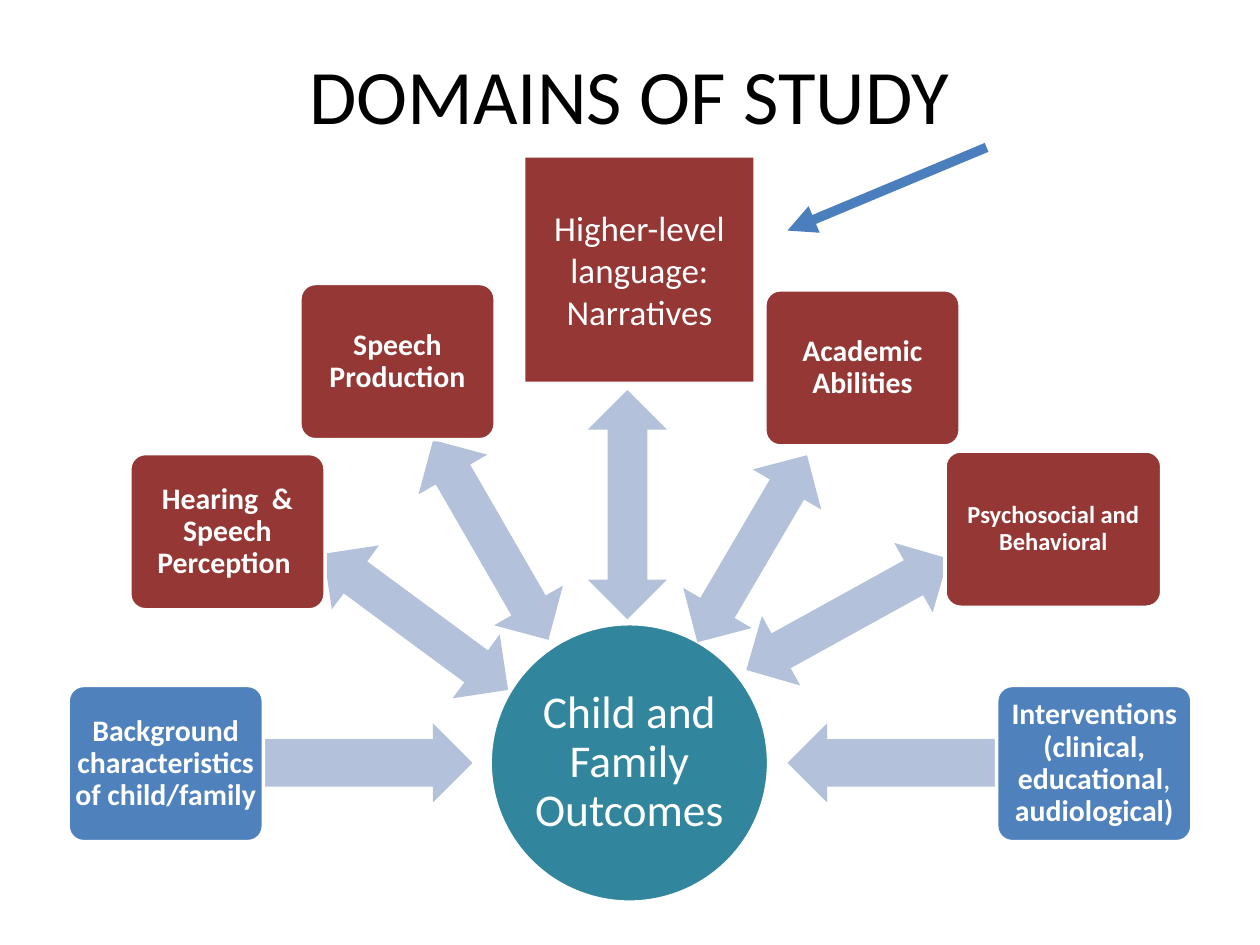
from pptx import Presentation
from pptx import util as u
from pptx.dml import color
from pptx.enum import shapes, text
from pptx.oxml import parse_xml
from pptx.oxml import ns

Inches, Pt = u.Inches, u.Pt
KIND = shapes.MSO_SHAPE
HEX = {"red": "953735", "blue": "4F81BD", "teal": "31859C",
       "arrow": "B3C1DB", "line": "4B7EBC", "white": "FFFFFF", "black": "000000"}

deck = Presentation()
deck.slide_width, deck.slide_height = Inches(10), Inches(7.5)
slide = deck.slides.add_slide(deck.slide_layouts[5])


def rgb(name):
    return color.RGBColor.from_string(HEX[name])


def draw(kind, place, fill, label="", size=17, bold=False, edge=True, pad=0.02, gap=0.9):
    shape = slide.shapes.add_shape(kind, *[Inches(n) for n in place])
    shape.shadow.inherit = False
    shape.fill.solid()
    shape.fill.fore_color.rgb = rgb(fill)
    if edge:
        shape.line.color.rgb = rgb("white")
        shape.line.width = Pt(2)
    else:
        shape.line.fill.background()
    if label:
        frame = shape.text_frame
        frame.text = label
        frame.word_wrap = True
        frame.vertical_anchor = text.MSO_ANCHOR.MIDDLE
        frame.margin_left = frame.margin_right = Inches(pad)
        frame.margin_top = frame.margin_bottom = Inches(pad)
        para = frame.paragraphs[0]
        para.alignment = text.PP_ALIGN.CENTER
        para.line_spacing = gap
        font = para.runs[0].font
        font.name, font.size, font.bold = "Calibri", Pt(size), bold
        font.color.rgb = rgb("white")
    return shape


title = slide.shapes.title
title.left, title.top = Inches(0.33), Inches(0.33)
title.width, title.height = Inches(9.33), Inches(0.83)
title.text_frame.text = "DOMAINS OF STUDY"
title.text_frame.vertical_anchor = text.MSO_ANCHOR.MIDDLE
head = title.text_frame.paragraphs[0]
head.alignment = text.PP_ALIGN.CENTER
font = head.runs[0].font
font.name, font.size = "Calibri", Pt(44)
font.color.rgb = rgb("black")

draw(KIND.OVAL, (3.89, 4.95, 2.21, 2.21), "teal", "Child and Family Outcomes", 26)

for kind, left in ((KIND.RIGHT_ARROW, 1.31), (KIND.LEFT_ARROW, 6.25)):
    arrow = draw(kind, (left, 5.74, 2.44, 0.63), "arrow", edge=False)
    arrow.adjustments[0] = 0.6

for left, top, width, turn in (
    (2.39, 4.62, 1.82, 216.4),
    (2.98, 3.97, 1.83, 240),
    (4.07, 3.69, 1.82, 270),
    (5.11, 4.04, 1.72, 300.4),
    (5.81, 4.56, 1.83, 331.1),
):
    arrow = draw(KIND.LEFT_RIGHT_ARROW, (left, top, width, 0.63), "arrow", edge=False)
    arrow.rotation = turn

for left, top, width, fill, size, label in (
    (0.54, 5.44, 1.55, "blue", 17, "Background characteristics of child/family"),
    (1.03, 3.6, 1.55, "red", 17, "Hearing  & Speech Perception "),
    (2.38, 2.25, 1.55, "red", 17, "Speech Production"),
    (6.07, 2.3, 1.55, "red", 17, "Academic Abilities"),
    (7.5, 3.58, 1.72, "red", 14, "Psychosocial and Behavioral"),
    (7.91, 5.44, 1.55, "blue", 17, "Interventions (clinical, educational"),
):
    box = draw(KIND.ROUNDED_RECTANGLE, (left, top, width, 1.24), fill, label, size, True)
    box.adjustments[0] = 0.1

para = box.text_frame.paragraphs[0]
for part, bold in ((", ", False), ("audiological)", True)):
    run = para.add_run()
    run.text = part
    run.font.name, run.font.size, run.font.bold = "Calibri", Pt(17), bold
    run.font.color.rgb = rgb("white")

draw(KIND.RECTANGLE, (4.17, 1.25, 1.81, 1.78), "red",
     "Higher-level language: Narratives", 20, edge=False, pad=0.1, gap=1.0)

line = slide.shapes.add_connector(shapes.MSO_CONNECTOR.STRAIGHT,
                                  Inches(7.83), Inches(1.17), Inches(6.25), Inches(1.83))
line.line.color.rgb = rgb("line")
line.line.width = Pt(5.5)
line.line._get_or_add_ln().append(
    parse_xml(f'<a:tailEnd {ns.nsdecls("a")} type="triangle"/>'))
line._element.spPr.append(parse_xml(f'<a:effectLst {ns.nsdecls("a")}/>'))

deck.save("out.pptx")
